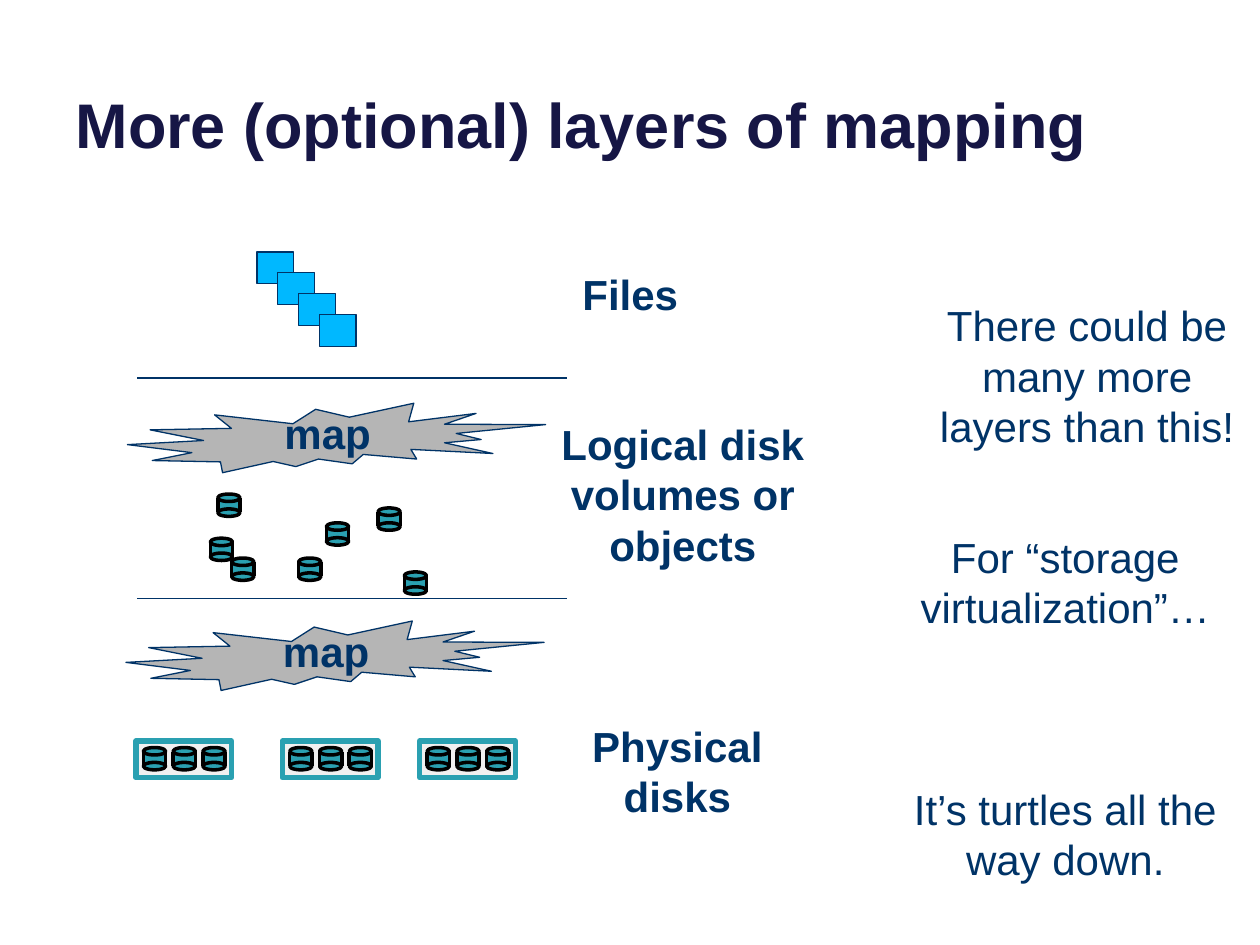
"""Build the slide on layered mapping from files down to physical disks."""
import pptx
import pptx.dml.color
import pptx.enum.shapes
import pptx.enum.text
import pptx.oxml
import pptx.util

Cm, Pt = pptx.util.Cm, pptx.util.Pt
SHAPES = pptx.enum.shapes.MSO_SHAPE
ALIGN = pptx.enum.text.PP_ALIGN
ANCHOR = pptx.enum.text.MSO_ANCHOR
AUTO_SIZE = pptx.enum.text.MSO_AUTO_SIZE

COLORS = {"title": "161645", "ink": "003367", "teal": "2AA0B1", "rack": "F0F0F0",
          "burst": "B5B5B5", "file": "00B8FF", "black": "000000"}

TITLE = ("More (optional) layers of mapping", (1.27, -0.94, 22.86, 4.32))
LAYER_LABELS = [
    ("Files", (10.8, 5.28, 3.81, 1.27)),
    ("Logical disk volumes or objects", (10.59, 8.31, 6.35, 3.33)),
    ("Physical disks", (11.43, 14.4, 4.45, 2.31)),
]
REMARKS = [
    ("There could be many more layers than this!", (18.42, 5.92, 6.99, 3.33)),
    ("For “storage virtualization”…", (17.98, 10.59, 6.99, 2.31)),
    ("It’s turtles all the way down.", (17.98, 15.67, 6.99, 2.31)),
]
MAP_LABEL = "map"
MAP_CORNERS = [(2.54, 12.52), (2.57, 8.13)]
RACK_LEFTS = [2.74, 5.69, 8.46]
RACK_TOP = 14.94
DISKS_PER_RACK = 3
VOLUME_CORNERS = [(4.24, 10.85), (4.67, 11.25), (6.02, 11.25), (4.39, 9.96),
                  (7.62, 10.24), (6.58, 10.54), (8.15, 11.53)]
FILE_COUNT, FILE_CORNER, FILE_STEP = 4, (5.18, 5.08), 0.42
LAYER_BORDERS = [7.62, 12.07]
DISK_WIDTH = 0.45


def rgb(color):
    return pptx.dml.color.RGBColor.from_string(COLORS[color])


def apply(target, values):
    for attribute, value in values.items():
        setattr(target, attribute, value)


def draw_shape(parent, kind, box, fill, line=None, weight=0.75):
    shape = parent.add_shape(kind, *map(Cm, box))
    shape.shadow.inherit = False
    shape.fill.solid()
    shape.fill.fore_color.rgb = rgb(fill)
    if line:
        shape.line.color.rgb = rgb(line)
        shape.line.width = Pt(weight)
    else:
        shape.line.fill.background()


def draw_line(parent, ends, color, weight):
    connector = parent.add_connector(pptx.enum.shapes.MSO_CONNECTOR.STRAIGHT, *map(Cm, ends))
    connector.line.color.rgb = rgb(color)
    connector.line.width = Pt(weight)
    connector._element.spPr.append(pptx.oxml.parse_xml(
        '<a:effectLst xmlns:a="http://schemas.openxmlformats.org/drawingml/2006/main"/>'))


def draw_disk(parent, left, top):
    draw_shape(parent, SHAPES.RECTANGLE, (left, top + 0.07, DISK_WIDTH, 0.25), "teal")
    for rim in (top, top + 0.3):
        draw_shape(parent, SHAPES.OVAL, (left, rim, DISK_WIDTH, 0.15), "teal", "black", 2)
    for side in (left + DISK_WIDTH, left):
        draw_line(parent, (side, top + 0.08, side, top + 0.37), "black", 2)


def format_text(frame, text, frame_values, alignment, font_values, color):
    frame.text = text
    apply(frame, frame_values)
    paragraph = frame.paragraphs[0]
    paragraph.alignment = alignment
    font = paragraph.runs[0].font
    apply(font, {"name": "Arial", **font_values})
    font.color.rgb = rgb(color)


def draw_label(parent, text, box, bold=True):
    label = parent.add_textbox(*map(Cm, box))
    format_text(label.text_frame, text,
                {"word_wrap": True, "auto_size": AUTO_SIZE.SHAPE_TO_FIT_TEXT},
                ALIGN.CENTER, {"size": Pt(24), "bold": bold}, "ink")


def main():
    deck = pptx.Presentation()
    apply(deck, {"slide_width": Cm(25.4), "slide_height": Cm(19.05)})
    slide = deck.slides.add_slide(deck.slide_layouts[5])
    canvas = slide.shapes

    heading, heading_box = TITLE
    apply(canvas.title, dict(zip(("left", "top", "width", "height"), map(Cm, heading_box))))
    format_text(canvas.title.text_frame, heading,
                {"vertical_anchor": ANCHOR.BOTTOM, "word_wrap": True, "auto_size": AUTO_SIZE.NONE},
                ALIGN.LEFT, {"size": Pt(36), "bold": True}, "title")

    for left in RACK_LEFTS:
        rack = canvas.add_group_shape().shapes
        draw_shape(rack, SHAPES.RECTANGLE, (left, RACK_TOP, 1.93, 0.74), "rack", "teal", 3)
        for slot in range(DISKS_PER_RACK):
            draw_disk(rack, left + 0.15 + 0.6 * slot, RACK_TOP + 0.13)

    for corner in VOLUME_CORNERS:
        draw_disk(canvas.add_group_shape().shapes, *corner)

    for left, top in MAP_CORNERS:
        draw_shape(canvas, SHAPES.EXPLOSION2, (left, top, 8.43, 1.4), "burst", "ink")
        draw_label(canvas, MAP_LABEL, (left + 2.13, top - 0.04, 3.81, 1.27))

    for index in range(FILE_COUNT):
        left, top = (start + index * FILE_STEP for start in FILE_CORNER)
        draw_shape(canvas, SHAPES.RECTANGLE, (left, top, 0.74, 0.64), "file", "ink")

    for border in LAYER_BORDERS:
        draw_line(canvas, (2.77, border, 11.43, border), "ink", 0.75)

    for labels, bold in ((LAYER_LABELS, True), (REMARKS, False)):
        for text, box in labels:
            draw_label(canvas, text, box, bold)

    deck.save("out.pptx")


if __name__ == "__main__":
    main()
